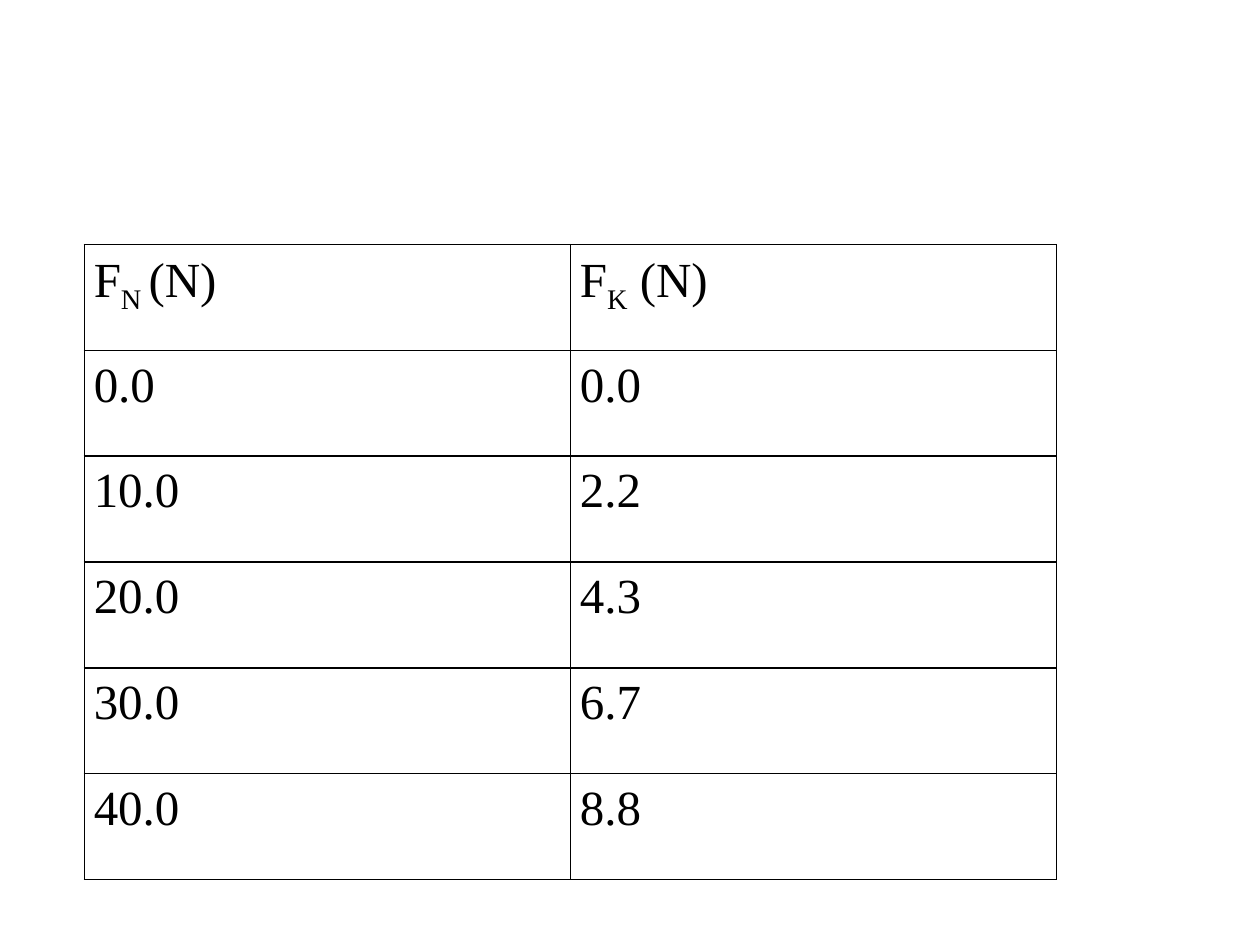
"""Build a slide with a table of normal force against kinetic friction."""
from lxml import etree
from pptx import Presentation
from pptx import util as u
from pptx.dml.color import RGBColor
from pptx.oxml.ns import qn

BLACK = RGBColor(0, 0, 0)
FONT = {"name": "Times New Roman", "size": u.Pt(28), "bold": False}
PAD = {"margin_left": u.Cm(0.19), "margin_right": u.Cm(0.19),
       "margin_top": 0, "margin_bottom": 0}
ROWS = [
    [["F", "N ", "(N)"], ["F", "K", " (N)"]],
    [["0.0"], ["0.0"]],
    [["10.0"], ["2.2"]],
    [["20.0"], ["4.3"]],
    [["30.0"], ["6.7"]],
    [["40.0"], ["8.8"]],
]


def edge(cell):
    props = cell._tc.get_or_add_tcPr()
    for side in ("lnL", "lnR", "lnT", "lnB"):
        line = etree.SubElement(props, qn(f"a:{side}"), w=str(u.Pt(1)))
        fill = etree.SubElement(line, qn("a:solidFill"))
        etree.SubElement(fill, qn("a:srgbClr"), val=str(BLACK))


deck = Presentation()
deck.slide_width, deck.slide_height = u.Cm(25.4), u.Cm(19.05)
slide = deck.slides.add_slide(deck.slide_layouts[6])

table = slide.shapes.add_table(
    len(ROWS), 2, u.Cm(1.7), u.Cm(4.93), u.Cm(19.6), u.Cm(12.8)).table
table.first_row = table.horz_banding = False

for row, words in enumerate(ROWS):
    for col, parts in enumerate(words):
        cell = table.cell(row, col)
        edge(cell)
        cell.fill.background()
        for key, value in PAD.items():
            setattr(cell, key, value)
        para = cell.text_frame.paragraphs[0]
        para.line_spacing = 1.15
        for spot, part in enumerate(parts):
            run = para.add_run()
            run.text = part
            for key, value in FONT.items():
                setattr(run.font, key, value)
            run.font.color.rgb = BLACK
            if spot == 1:
                run._r.get_or_add_rPr().set("baseline", "-25000")

deck.save("out.pptx")
